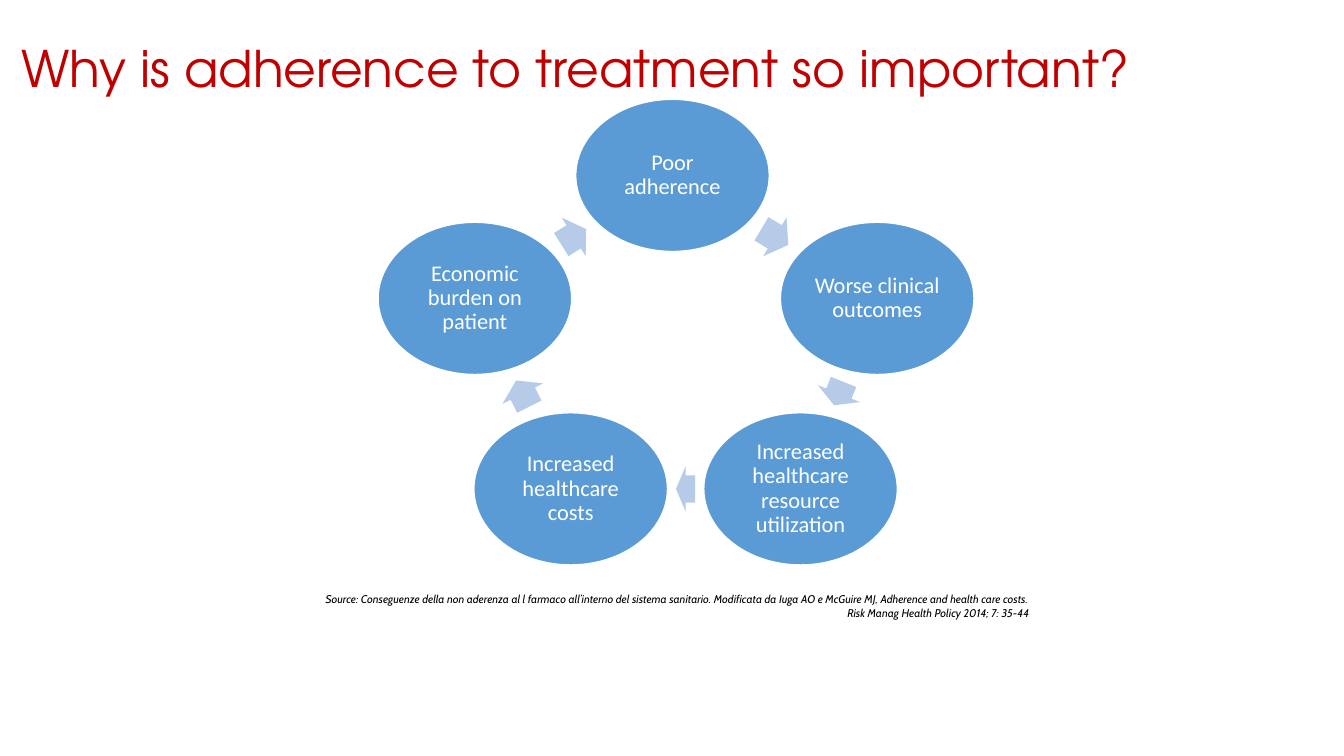
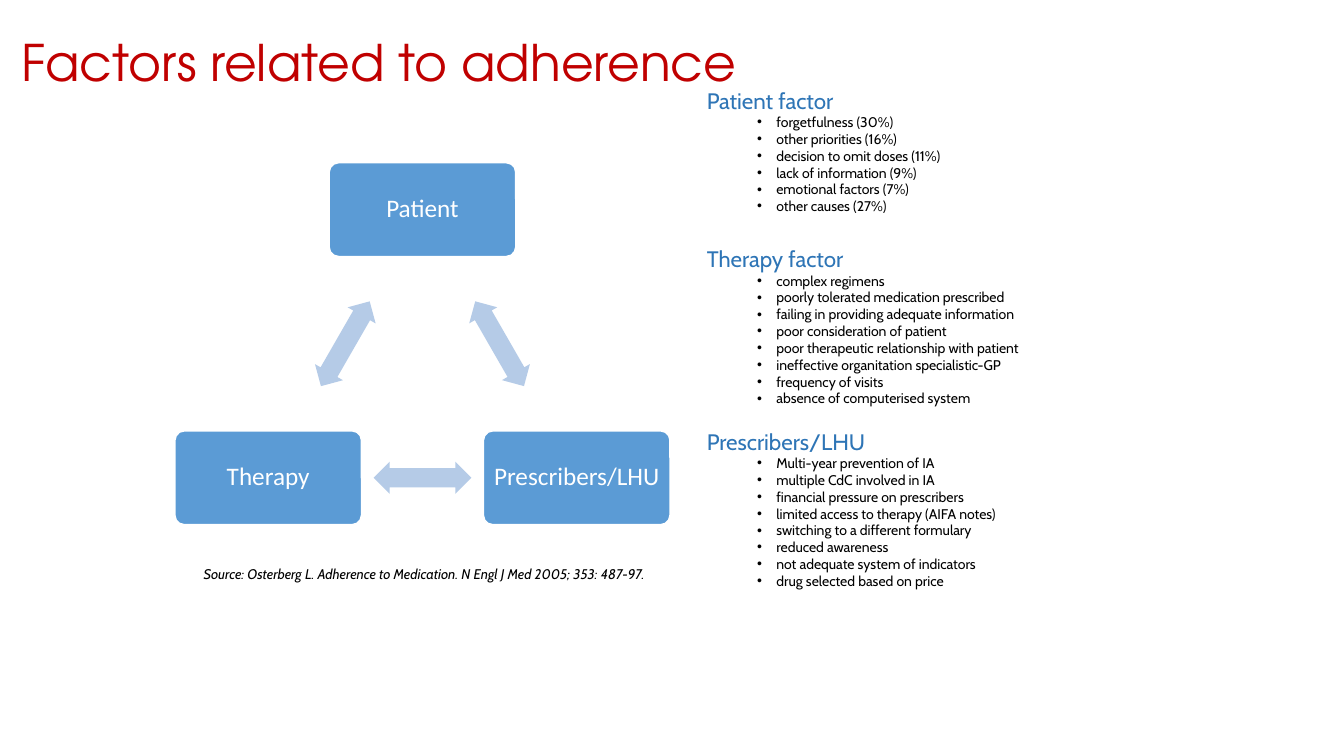
import math
from lxml import etree
from pptx import Presentation
from pptx import util as u
from pptx.dml.color import RGBColor
from pptx.enum import shapes, text
from pptx.oxml.ns import qn

PX = 9144  # 100 px to the inch
RED = RGBColor(0xC0, 0x00, 0x00)
BLUE = RGBColor(0x5B, 0x9B, 0xD5)
PALE = RGBColor(0xB5, 0xCB, 0xE7)
DEEP = RGBColor(0x2E, 0x75, 0xB6)
BLACK = RGBColor(0x00, 0x00, 0x00)
WHITE = RGBColor(0xFF, 0xFF, 0xFF)
KIND = shapes.MSO_SHAPE
ALIGN = text.PP_ALIGN
TOP, MIDDLE = text.MSO_ANCHOR.TOP, text.MSO_ANCHOR.MIDDLE


def style(para, face, size, color, align=ALIGN.LEFT, italic=False):
    para.alignment = align
    for run in para.runs:
        font = run.font
        font.name, font.size, font.italic = face, u.Pt(size), italic
        font.color.rgb = color


def cycle(slide, kind, size, points, labels, pt, arrow, spans):
    """Draw labelled nodes centred on points, with an arrow midway to each next node.

    spans holds the length and thickness of each arrow.
    """
    wide, high = size
    for i, ((x, y), label) in enumerate(zip(points, labels)):
        node = slide.shapes.add_shape(
            kind, (x - wide / 2) * PX, (y - high / 2) * PX, wide * PX, high * PX)
        node.shadow.inherit = False
        node.fill.solid()
        node.fill.fore_color.rgb = BLUE
        node.line.color.rgb = WHITE
        node.line.width = u.Pt(1)
        if kind == KIND.ROUNDED_RECTANGLE:
            node.adjustments[0] = 0.1
        frame = node.text_frame
        frame.margin_left = frame.margin_right = 2 * PX
        frame.margin_top = frame.margin_bottom = 2 * PX
        frame.word_wrap = True
        frame.vertical_anchor = MIDDLE
        frame.text = label
        frame.paragraphs[0].line_spacing = 0.9
        style(frame.paragraphs[0], "Calibri", pt, WHITE, ALIGN.CENTER)

        right, down = points[(i + 1) % len(points)]
        length, thick = spans[i]
        link = slide.shapes.add_shape(
            arrow, ((x + right - length) / 2) * PX, ((y + down - thick) / 2) * PX,
            length * PX, thick * PX)
        link.adjustments[0], link.adjustments[1] = 0.6, 0.5
        link.rotation = math.degrees(math.atan2(down - y, right - x)) % 360
        link.shadow.inherit = False
        link.fill.solid()
        link.fill.fore_color.rgb = PALE
        link.line.fill.background()


deck = Presentation()
deck.slide_width, deck.slide_height = 1333 * PX, 750 * PX

# Layout, title, title top, source, source box, source size, source alignment
PAGES = [
    (5, "Why is adherence to treatment so important?", 32,
     "Source: Conseguenze della non aderenza al l farmaco all’interno del sistema "
     "sanitario. Modificata da Iuga AO e McGuire MJ, Adherence and health care costs. "
     "Risk Manag Health Policy 2014; 7: 35-44",
     (304, 583, 727, 51), 8, ALIGN.RIGHT),
    (1, "Factors related to adherence", 26,
     "Source: Osterberg L. Adherence to Medication. N Engl J Med 2005; 353: 487-97.",
     (192, 556, 525, 27), 10, ALIGN.LEFT),
]
for layout, name, top, source, box, size, align in PAGES:
    slide = deck.slides.add_slide(deck.slide_layouts[layout])
    title = slide.shapes.title
    title.left, title.top, title.width, title.height = (
        n * PX for n in (11, top, 1311, 71))
    frame = title.text_frame
    frame.text = name
    frame.vertical_anchor = TOP
    frame.auto_size = text.MSO_AUTO_SIZE.NONE
    style(frame.paragraphs[0], "TeX Gyre Adventor", 36, RED)

    frame = slide.shapes.add_textbox(*(n * PX for n in box)).text_frame
    frame.word_wrap = True
    frame.text = source
    style(frame.paragraphs[0], "Cabin", size, BLACK, align, italic=True)

first, second = deck.slides

cycle(first, KIND.OVAL, (192, 151),
      [(667, 174), (870, 296), (794, 485), (566, 485), (471, 296)],
      ["Poor adherence", "Worse clinical outcomes",
       "Increased healthcare resource utilization",
       "Increased healthcare costs", "Economic burden on patient"],
      16, KIND.RIGHT_ARROW, [(n, 45) for n in (31, 25, 19, 29, 29)])

cycle(second, KIND.ROUNDED_RECTANGLE, (185, 93),
      [(419, 208), (572, 474), (266, 474)],
      ["Patient", "Prescribers/LHU", "Therapy"],
      18, KIND.LEFT_RIGHT_ARROW, [(97, 32)] * 3)

# Heading, space before it in points, causes
FACTORS = [
    ("Patient factor", 0, [
        "forgetfulness (30%)", "other priorities (16%)",
        "decision to omit doses (11%)", "lack of information (9%)",
        "emotional factors (7%)", "other causes (27%)"]),
    ("Therapy factor", 22, [
        "complex regimens", "poorly tolerated medication prescribed",
        "failing in providing adequate information", "poor consideration of patient",
        "poor therapeutic relationship with patient",
        "ineffective organitation specialistic-GP", "frequency of visits",
        "absence of computerised system"]),
    ("Prescribers/LHU", 15, [
        "Multi-year prevention of IA", "multiple CdC involved in IA",
        "financial pressure on prescribers", "limited access to therapy (AIFA notes)",
        "switching to a different formulary", "reduced awareness",
        "not adequate system of indicators", "drug selected based on price"]),
]
body = second.placeholders[1]
body.left, body.top, body.width, body.height = (n * PX for n in (691, 81, 415, 502))
frame = body.text_frame
frame.auto_size = text.MSO_AUTO_SIZE.NONE
frame.vertical_anchor = TOP
para = frame.paragraphs[0]
for head, gap, causes in FACTORS:
    for i, line in enumerate([head] + causes):
        if para is None:
            para = frame.add_paragraph()
        para.text = line
        para.level = min(i, 1)
        para.space_before = u.Pt(0 if i else gap)
        props = para._p.get_or_add_pPr()
        props.set("marL", str(69 * PX if i else 0))
        props.set("indent", str(-19 * PX if i else 0))
        if i:
            etree.SubElement(props, qn("a:buFont")).set("typeface", "Arial")
            etree.SubElement(props, qn("a:buChar")).set("char", "•")
            style(para, "Cabin", 10, BLACK)
        else:
            etree.SubElement(props, qn("a:buNone"))
            style(para, "Cabin", 16, DEEP)
        para = None

deck.save("out.pptx")
